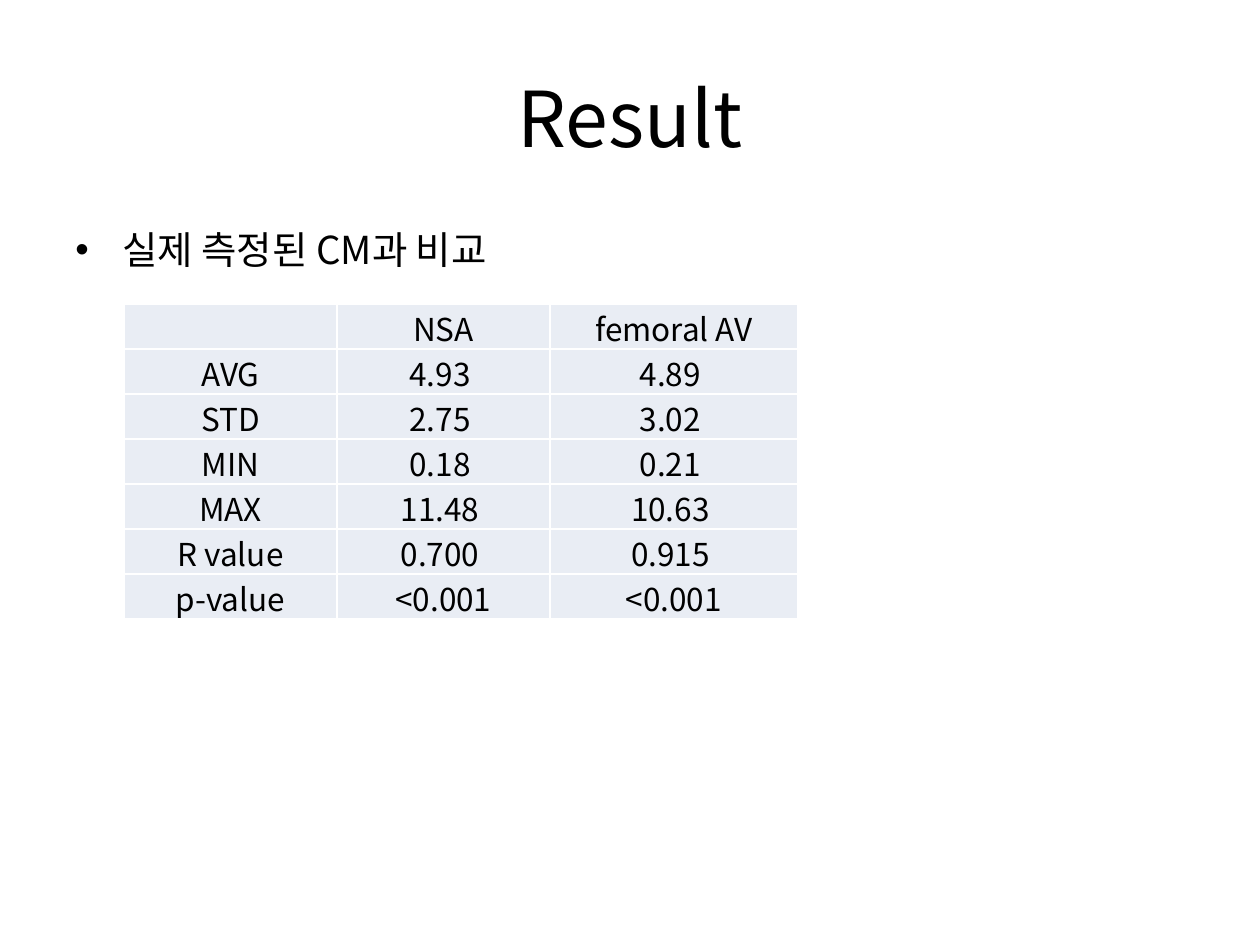
"""Build the Result slide with its comparison table."""
from lxml.etree import SubElement
from pptx import Presentation
from pptx.dml.color import RGBColor
from pptx.enum.text import MSO_ANCHOR, PP_ALIGN
from pptx.oxml.ns import qn
from pptx.util import Pt

PX = 914400 / 126
FONT = "Noto Sans CJK KR"
BLACK = RGBColor(0x00, 0x00, 0x00)
WHITE = RGBColor(0xFF, 0xFF, 0xFF)
PALE = RGBColor(0xE9, 0xED, 0xF4)


def px(*values):
    return [round(v * PX) for v in values]


def add_run(p, text, size):
    r = p.add_run()
    r.text = text
    r.font.size = Pt(size)
    r.font.name = FONT
    r.font.color.rgb = BLACK
    SubElement(r.font._element, qn("a:ea"), typeface=FONT)


prs = Presentation()
prs.slide_width, prs.slide_height = px(1260, 945)
s = prs.slides.add_slide(prs.slide_layouts[5])
s.background.fill.solid()
s.background.fill.fore_color.rgb = WHITE

title = s.shapes.title
title.left, title.top, title.width, title.height = px(63, 38, 1134, 157)
tf = title.text_frame
tf.vertical_anchor = MSO_ANCHOR.MIDDLE
p = tf.paragraphs[0]
p.alignment = PP_ALIGN.CENTER
add_run(p, "Result", 44)

body = s.shapes.add_textbox(*px(63, 220, 1134, 624))
tf = body.text_frame
tf.word_wrap = True
p = tf.paragraphs[0]
pPr = p._p.get_or_add_pPr()
indent = px(47)[0]
pPr.set("marL", str(indent))
pPr.set("indent", str(-indent))
spcBef = SubElement(pPr, qn("a:spcBef"))
SubElement(spcBef, qn("a:spcPct"), val="20000")
SubElement(pPr, qn("a:buFont"), typeface="Arial")
SubElement(pPr, qn("a:buChar"), char="•")
add_run(p, "실제 측정된 CM과 비교", 22)

rows = [
    ("", "NSA", "femoral AV"),
    ("AVG", "4.93 ", "4.89 "),
    ("STD", "2.75 ", "3.02 "),
    ("MIN", "0.18 ", "0.21 "),
    ("MAX", "11.48 ", "10.63 "),
    ("R value", "0.700 ", "0.915 "),
    ("p-value", "<0.001", "<0.001"),
]
widths = px(213, 213, 248)
row_height = px(45)[0]
left, top = px(124, 304)
table = s.shapes.add_table(
    len(rows), len(widths), left, top, sum(widths), row_height * len(rows)
).table
for column, width in zip(table.columns, widths):
    column.width = width

for i, row in enumerate(rows):
    table.rows[i].height = row_height
    for j, text in enumerate(row):
        cell = table.cell(i, j)
        cell.margin_left, cell.margin_top, cell.margin_right, cell.margin_bottom = px(1, 1, 1, 0)
        cell.vertical_anchor = MSO_ANCHOR.MIDDLE
        tcPr = cell._tc.get_or_add_tcPr()
        for side in ("lnL", "lnR", "lnT", "lnB"):
            ln = SubElement(tcPr, qn(f"a:{side}"), w=str(Pt(1)))
            fill = SubElement(ln, qn("a:solidFill"))
            SubElement(fill, qn("a:srgbClr"), val=str(WHITE))
        cell.fill.solid()
        cell.fill.fore_color.rgb = PALE
        p = cell.text_frame.paragraphs[0]
        p.alignment = PP_ALIGN.CENTER
        if text:
            add_run(p, text, 18)

prs.save("out.pptx")
